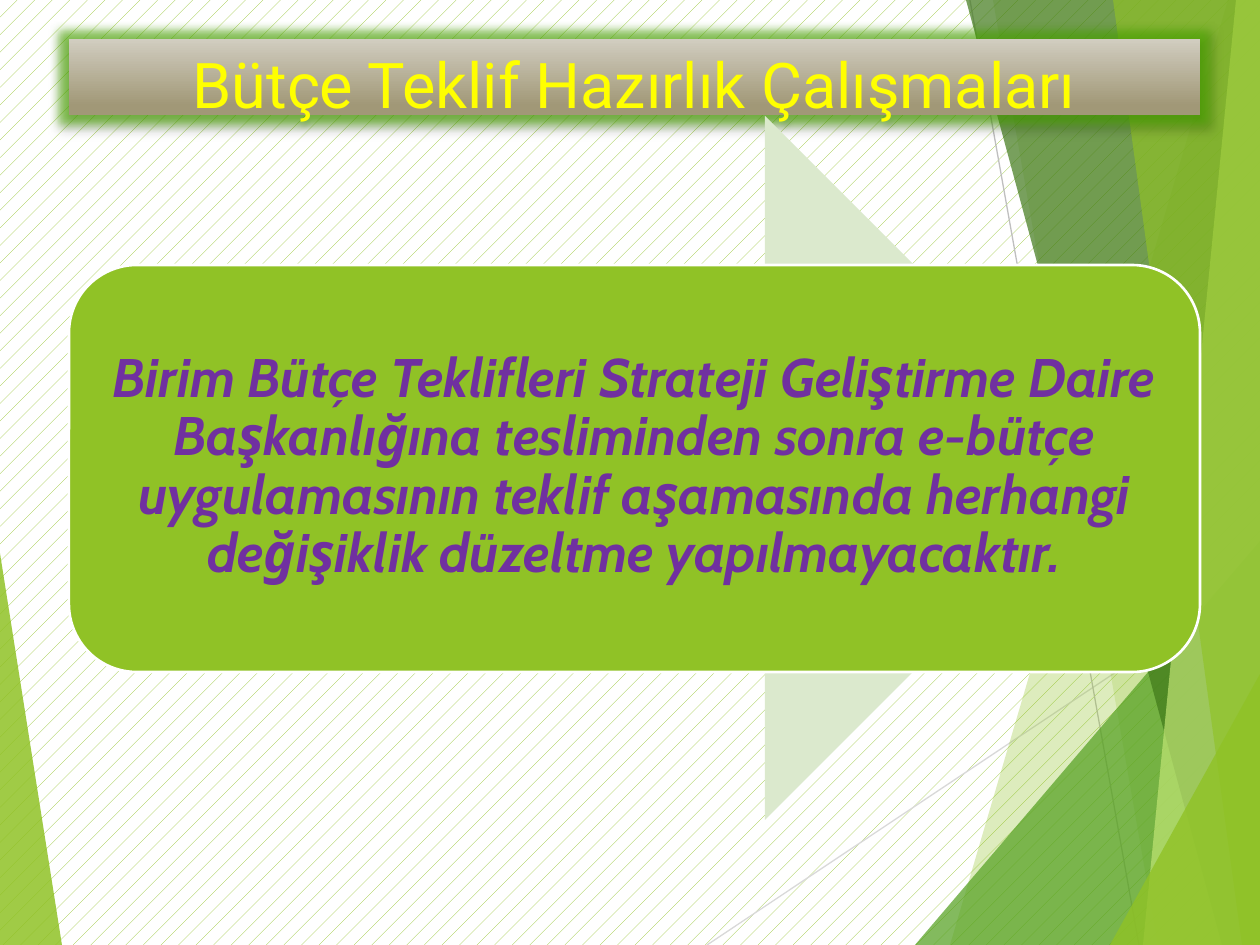
from dataclasses import dataclass

from lxml.etree import SubElement
from pptx import Presentation
from pptx.dml.color import RGBColor
from pptx.enum.dml import MSO_PATTERN
from pptx.enum.shapes import MSO_CONNECTOR, MSO_SHAPE
from pptx.enum.text import MSO_ANCHOR, MSO_AUTO_SIZE, PP_ALIGN
from pptx.oxml import parse_xml
from pptx.oxml.ns import nsdecls, qn
from pptx.util import Pt

EMU = 914400 / 126  # one px
W, H = 1260, 945


@dataclass(frozen=True)
class Theme:
    green: str = "90C226"
    leaf: str = "54A021"
    forest: str = "3F7819"
    lime: str = "C0E474"
    arrow: str = "DBE9CD"
    white: str = "FFFFFF"
    bar_top: str = "D1CDC0"
    bar_bottom: str = "A19877"
    glow: str = "4EB000"
    title: str = "FFFF00"
    body: str = "7030A0"
    title_font: str = "Roboto"
    body_font: str = "Cabin"
    title_size: int = 36
    body_size: int = 31


T = Theme()
TITLE = "Bütçe Teklif Hazırlık Çalışmaları"
MESSAGE = ("Birim Bütçe Teklifleri Strateji Geliştirme Daire Başkanlığına "
           "tesliminden sonra e-bütçe uygulamasının teklif aşamasında herhangi "
           "değişiklik düzeltme yapılmayacaktır.")


def px(n):
    return round(n * EMU)


def rgb(color):
    return RGBColor.from_string(color)


def set_all(obj, values):
    for name, value in values.items():
        setattr(obj, name, value)


def paint(sp, color, alpha=100):
    sp.shadow.inherit = False
    sp.line.fill.background()
    sp.fill.solid()
    sp.fill.fore_color.rgb = rgb(color)
    if alpha < 100:
        clr = sp.fill._xPr.find(".//" + qn("a:srgbClr"))
        SubElement(clr, qn("a:alpha"), val=str(alpha * 1000))


def add_facet(s, points, color, alpha):
    fb = s.shapes.build_freeform(*points[0], scale=EMU)
    fb.add_line_segments(points[1:], close=True)
    paint(fb.convert_to_shape(), color, alpha)


def add_band(s, top_x, bottom_x, color, alpha):
    """Facet between a slanted edge and the right side of the slide."""
    add_facet(s, [(top_x, 0), (bottom_x, H), (W, H), (W, 0)], color, alpha)


def add_line(s, start, end, color):
    c = s.shapes.add_connector(MSO_CONNECTOR.STRAIGHT, *map(px, start + end))
    set_all(c.line, {"width": Pt(0.75)})
    c.line.color.rgb = rgb(color)
    SubElement(c._element.spPr, qn("a:effectLst"))


def add_shape(s, kind, box, color):
    sp = s.shapes.add_shape(kind, *map(px, box))
    paint(sp, color)
    return sp


def write(tf, text, color, font, line_spacing=1.0):
    p = tf.paragraphs[0]
    set_all(p, {"alignment": PP_ALIGN.CENTER, "line_spacing": line_spacing})
    r = p.add_run()
    r.text = text
    set_all(r.font, font)
    r.font.color.rgb = rgb(color)


def add_decor(s):
    add_facet(s, [(0, 553), (62, H), (0, H)], T.green, 85)
    add_line(s, (707, H), (W, 576), "D9D9D9")
    add_line(s, (970, 0), (1139, H), "BFBFBF")
    add_band(s, 1228, 950, T.green, 30)
    add_band(s, 993, 1158, T.green, 20)
    add_facet(s, [(915, H), (W, 541), (W, H)], T.leaf, 72)
    add_band(s, 966, 1222, T.forest, 70)
    add_band(s, 1236, 1143, T.lime, 70)
    add_band(s, 1113, 1242, T.green, 65)
    add_facet(s, [(1110, H), (W, 674), (W, H)], T.green, 80)


def add_title(s):
    sp = s.shapes.title
    s.shapes._spTree.append(sp._element)  # in front of the facets
    box = map(px, (69, 39, 1131, 76))
    set_all(sp, dict(zip(("left", "top", "width", "height"), box)))
    sp.fill.gradient()
    sp.fill.gradient_angle = 270
    stops = ((0, T.bar_top), (0.88, T.bar_bottom))
    for stop, (position, color) in zip(sp.fill.gradient_stops, stops):
        stop.position = position
        stop.color.rgb = rgb(color)
    # Green glow and a soft drop shadow
    sp._element.spPr.append(parse_xml(
        f'<a:effectLst {nsdecls("a")}>'
        f'<a:glow rad="{px(18)}"><a:srgbClr val="{T.glow}">'
        '<a:alpha val="60000"/></a:srgbClr></a:glow>'
        f'<a:outerShdw blurRad="{Pt(3.5)}" dist="{Pt(2.2)}" dir="5400000">'
        '<a:srgbClr val="000000"><a:alpha val="32000"/></a:srgbClr>'
        '</a:outerShdw></a:effectLst>'))
    tf = sp.text_frame
    set_all(tf, {"word_wrap": True, "auto_size": MSO_AUTO_SIZE.NONE,
                 "vertical_anchor": MSO_ANCHOR.TOP})
    write(tf, TITLE, T.title, {"name": T.title_font, "size": Pt(T.title_size)})


def add_message(s):
    add_shape(s, MSO_SHAPE.RIGHT_ARROW, (154, 116, 963, 704), T.arrow)
    card = add_shape(s, MSO_SHAPE.ROUNDED_RECTANGLE, (69, 265, 1131, 407), T.green)
    card.line.color.rgb = rgb(T.white)
    card.line.width = Pt(1.5)
    tf = s.shapes.add_textbox(*map(px, (88, 284, 1092, 367))).text_frame
    set_all(tf, {"word_wrap": True, "vertical_anchor": MSO_ANCHOR.MIDDLE})
    set_all(tf, {f"margin_{side}": px(16)
                 for side in ("left", "top", "right", "bottom")})
    write(tf, MESSAGE, T.body, {"name": T.body_font, "size": Pt(T.body_size),
                                "bold": True, "italic": True}, 0.9)


def main():
    prs = Presentation()
    set_all(prs, {"slide_width": px(W), "slide_height": px(H)})
    s = prs.slides.add_slide(prs.slide_layouts[5])
    # Hatched background
    bg = s.background.fill
    bg.patterned()
    bg.pattern = MSO_PATTERN.PERCENT_5
    bg.fore_color.rgb = rgb(T.green)
    bg.back_color.rgb = rgb(T.white)
    add_decor(s)
    add_title(s)
    add_message(s)
    prs.save("out.pptx")


if __name__ == "__main__":
    main()
